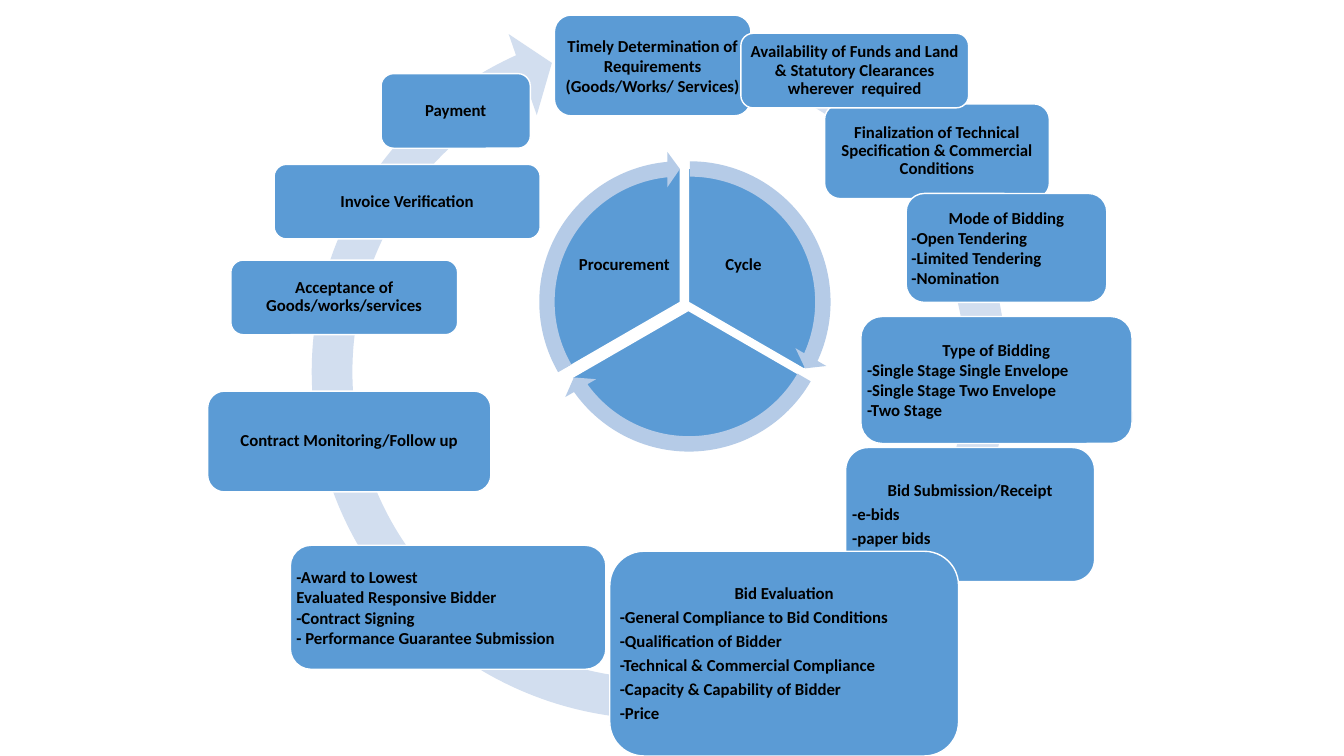
from pptx import Presentation
from pptx.dml.color import RGBColor
from pptx.enum.shapes import MSO_SHAPE
from pptx.enum.text import MSO_ANCHOR, PP_ALIGN
from pptx.util import Pt

ROUNDED, PIE, CIRCULAR_ARROW = MSO_SHAPE.ROUNDED_RECTANGLE, MSO_SHAPE.PIE, MSO_SHAPE.CIRCULAR_ARROW
LEFT, CENTER = PP_ALIGN.LEFT, PP_ALIGN.CENTER
MIDDLE = MSO_ANCHOR.MIDDLE

COLORS = {"blue": "5B9BD5", "ring": "D2DEEF", "wheel_arrow": "B5CBE7",
          "edge": "FFFFFF", "text": "000000"}
FONT, SIZE = "Calibri", 12

# Line spacing and space after each paragraph
SINGLE, SPACED = (1, 0), (0.9, 4.2)

# Steps, back to front: (left, top, width, height), spacing, centred lines, listed lines
STEPS = [
    ((396, 10.8, 140.4, 72), SINGLE,
     ["Timely Determination of Requirements", "(Goods/Works/ Services)"], []),
    ((589, 74.2, 160.6, 67.7), SPACED,
     ["Finalization of Technical Specification & Commercial Conditions"], []),
    ((647.3, 138.2, 143.3, 77.8), SINGLE, ["Mode of Bidding"],
     ["-Open Tendering", "-Limited Tendering", "-Nomination"]),
    ((614.9, 226.1, 193.7, 90.7), SINGLE, ["Type of Bidding"],
     ["-Single Stage Single Envelope", "-Single Stage Two Envelope", "-Two Stage"]),
    ((604.1, 319.7, 177.8, 95.8), SPACED, ["Bid Submission/Receipt"],
     ["-e-bids", "-paper bids"]),
    ((435.6, 393.8, 249.1, 146.2), SPACED, ["Bid Evaluation"],
     ["-General Compliance to Bid Conditions", "-Qualification of Bidder",
      "-Technical & Commercial Compliance", "-Capacity & Capability of Bidder", "-Price"]),
    ((207.4, 389.5, 225.4, 88.6), SINGLE, [],
     ["-Award to Lowest", "Evaluated Responsive Bidder", "-Contract Signing",
      "- Performance Guarantee Submission"]),
    ((148.3, 279.4, 202.3, 72), SPACED, ["Contract Monitoring/Follow up"], []),
    ((529.2, 23.8, 162.7, 53.3), SPACED,
     ["Availability of Funds and Land & Statutory Clearances wherever  required"], []),
    ((164.9, 185.8, 162, 53.3), SPACED, ["Acceptance of Goods/works/services"], []),
    ((195.8, 117.4, 190.1, 53.3), SPACED, ["Invoice Verification"], []),
    ((272.2, 52.6, 106.6, 53.3), SPACED, ["Payment"], []),
]

# Arrows: left, top, size, colour, (thickness %, head width %), (head, end, start angles)
RING = (206.6, 1.4, 528.5, "ring", (5.5, 5.8), (5.51, 245.35, 280.56))
WHEEL_ARROWS = [
    (385.2, 108, 215.3, "wheel_arrow", (5.1, 5.9), (5.46, 24.54, 269.99)),
    (384.5, 114.5, 215.3, "wheel_arrow", (5.1, 5.9), (5.46, 144.53, 30.01)),
    (378, 108, 215.3, "wheel_arrow", (5.1, 5.9), (5.46, 264.55, 150)),
]

# Wheel slices: left, top, start angle; each spans a third of the circle
SLICE_SIZE, SLICE_SPAN = 191.5, 120
SLICES = [(396, 120.2, 270), (396, 126, 30), (390.2, 120.2, 150)]
LABELS = [("Procurement", 411.8), ("Cycle", 496.8)]
LABEL_TOP, LABEL_WIDTH, LABEL_HEIGHT = 160.6, 68.4, 56.9


def color(name):
    return RGBColor.from_string(COLORS[name])


def angle(degrees):
    """Adjustment value for an angle: 60000 units per degree, scaled by 100000."""
    return degrees * 0.6


def add_part(slide, kind, bounds, fill, outlined=True):
    part = slide.shapes.add_shape(kind, *map(Pt, bounds))
    part.shadow.inherit = False
    part.fill.solid()
    part.fill.fore_color.rgb = color(fill)
    if outlined:
        part.line.color.rgb = color("edge")
        part.line.width = Pt(1)
    else:
        part.line.fill.background()
    return part


def write(box, lines, spacing, inset):
    """Fill a box with (text, alignment) lines."""
    frame = box.text_frame
    frame.vertical_anchor = MIDDLE
    frame.margin_left = frame.margin_right = Pt(inset)
    frame.margin_top = frame.margin_bottom = Pt(inset)
    frame.text = "\n".join(text for text, _ in lines)
    for para, (_, alignment) in zip(frame.paragraphs, lines):
        para.alignment = alignment
        para.line_spacing, para.space_after = spacing[0], Pt(spacing[1])
        for span in para.runs:
            span.font.name, span.font.size, span.font.bold = FONT, Pt(SIZE), True
            span.font.color.rgb = color("text")


def add_arrow(slide, left, top, size, fill, percents, angles):
    arrow = add_part(slide, CIRCULAR_ARROW, (left, top, size, size), fill, outlined=False)
    thickness, head = (percent / 100 for percent in percents)
    for index, value in enumerate([thickness, *map(angle, angles), head]):
        arrow.adjustments[index] = value


def add_step(slide, bounds, spacing, headings, points):
    box = add_part(slide, ROUNDED, bounds, "blue")
    box.text_frame.word_wrap = True
    # The rounded corners already push the text inwards
    corner_inset = 0.29 * min(bounds[2:]) / 6
    lines = [(text, CENTER) for text in headings] + [(text, LEFT) for text in points]
    write(box, lines, spacing, max(0, 3.6 - corner_inset))


def main():
    deck = Presentation()
    deck.slide_width, deck.slide_height = Pt(960), Pt(540)
    slide = deck.slides.add_slide(deck.slide_layouts[6])

    # Outer cycle
    add_arrow(slide, *RING)
    for step in STEPS:
        add_step(slide, *step)

    # Central wheel
    for left, top, start in SLICES:
        piece = add_part(slide, PIE, (left, top, SLICE_SIZE, SLICE_SIZE), "blue")
        piece.adjustments[0] = angle(start)
        piece.adjustments[1] = angle((start + SLICE_SPAN) % 360)
    for text, left in LABELS:
        label = slide.shapes.add_textbox(Pt(left), Pt(LABEL_TOP), Pt(LABEL_WIDTH), Pt(LABEL_HEIGHT))
        write(label, [(text, CENTER)], SPACED, 1.2)
    for arrow in WHEEL_ARROWS:
        add_arrow(slide, *arrow)

    deck.save("out.pptx")


if __name__ == "__main__":
    main()
